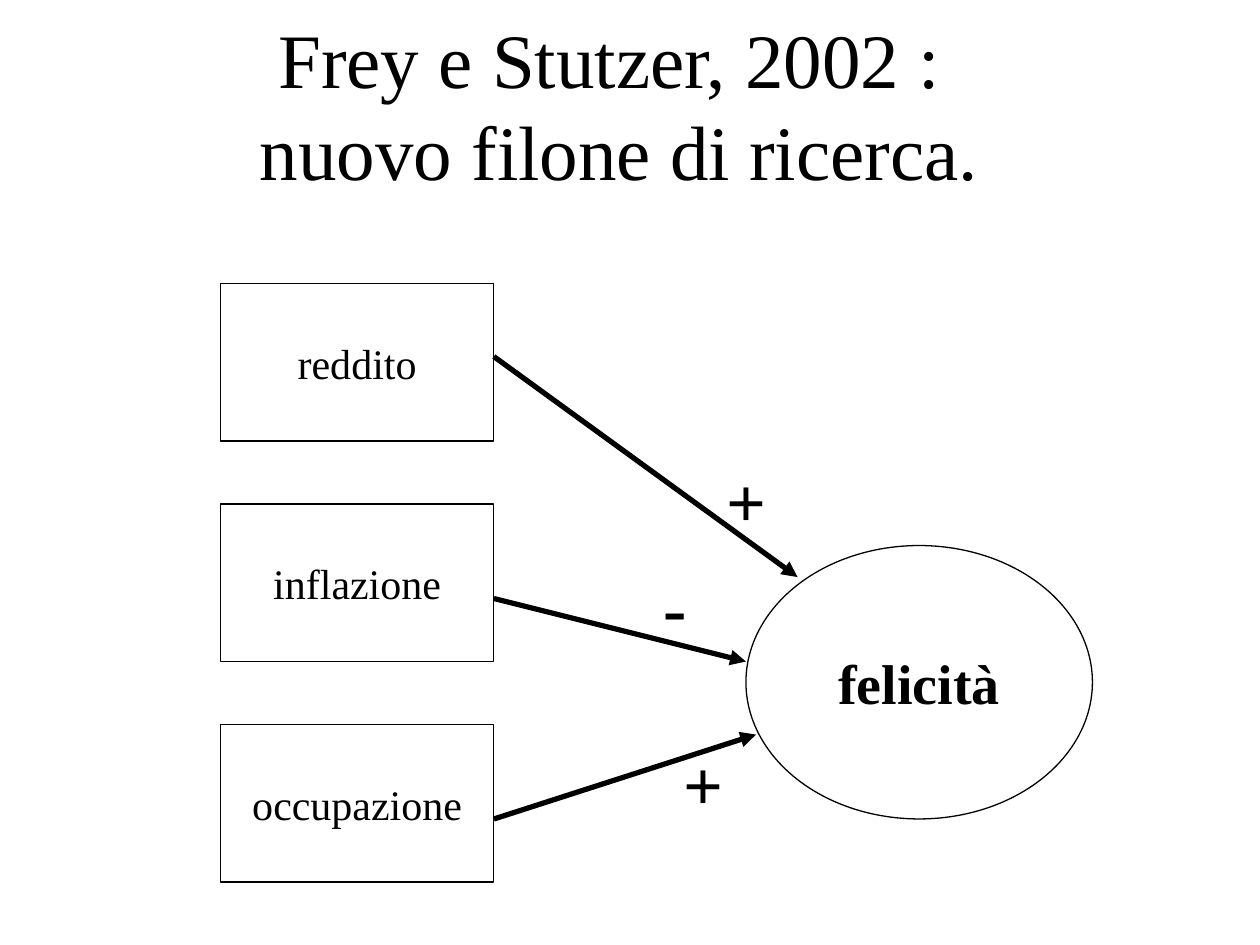
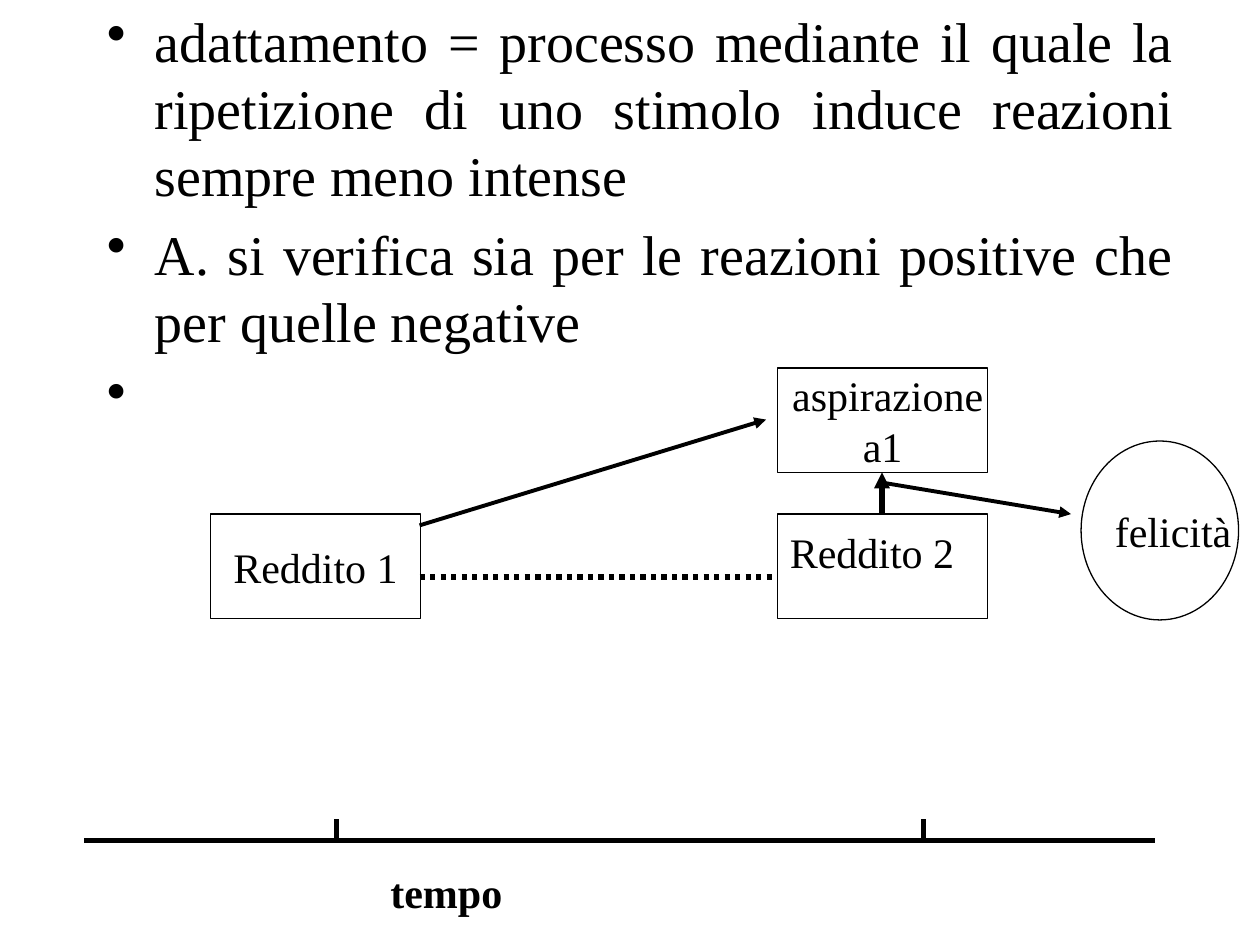
from lxml import etree
from pptx import Presentation
from pptx.dml.color import RGBColor
from pptx.enum.dml import MSO_LINE
from pptx.enum.shapes import MSO_CONNECTOR, MSO_SHAPE
from pptx.enum.text import MSO_ANCHOR, PP_ALIGN
from pptx.oxml.ns import qn
from pptx.util import Inches, Pt

RECT, OVAL = MSO_SHAPE.RECTANGLE, MSO_SHAPE.OVAL
STRAIGHT, DOTS = MSO_CONNECTOR.STRAIGHT, MSO_LINE.ROUND_DOT
TOP, MIDDLE = MSO_ANCHOR.TOP, MSO_ANCHOR.MIDDLE
LEFT, CENTER, JUSTIFY = PP_ALIGN.LEFT, PP_ALIGN.CENTER, PP_ALIGN.JUSTIFY

COLORS = {"ink": "000000", "paper": "FFFFFF"}
INK = RGBColor.from_string(COLORS["ink"])
PAPER = RGBColor.from_string(COLORS["paper"])
FONT = "Times New Roman"


def write(frame, lines, size, bold=False, align=LEFT, anchor=TOP, wrap=True, bullet=False):
    for key, value in {"word_wrap": wrap, "vertical_anchor": anchor}.items():
        setattr(frame, key, value)
    for i, words in enumerate(lines):
        para = frame.paragraphs[0] if i == 0 else frame.add_paragraph()
        para.text = words
        para.alignment = align
        if bullet:
            if i:
                para.space_before = Pt(size * 0.2)
            props = para._p.get_or_add_pPr()
            props.set("marL", str(Inches(0.38)))
            props.set("indent", str(-Inches(0.38)))
            etree.SubElement(props, qn("a:buChar")).set("char", "•")
        look = {"name": FONT, "size": Pt(size), "bold": bold}
        for run in para.runs:
            for key, value in look.items():
                setattr(run.font, key, value)
            run.font.color.rgb = INK


def link(slide, start, end, width, arrow=True, dash=None):
    line = slide.shapes.add_connector(STRAIGHT, *map(Inches, start + end))
    line.line.color.rgb = INK
    for key, value in {"width": Pt(width), "dash_style": dash}.items():
        setattr(line.line, key, value)
    if arrow:
        etree.SubElement(line.line._get_or_add_ln(), qn("a:tailEnd")).set("type", "triangle")
    etree.SubElement(line._element.spPr, qn("a:effectLst"))


deck = Presentation()
deck.slide_width, deck.slide_height = Inches(10), Inches(7.5)
model, adapt = [deck.slides.add_slide(deck.slide_layouts[6]) for _ in range(2)]

causes = ["reddito", "inflazione", "occupazione"]
nodes = [
    (model, RECT, (1.75, 2.25 + 1.75 * i, 2.17, 1.25), [name], 24, False)
    for i, name in enumerate(causes)
] + [
    (model, OVAL, (5.92, 4.33, 2.75, 2.17), ["felicità"], 32, True),
    (adapt, RECT, (1.67, 4.08, 1.67, 0.83), ["Reddito 1"], 24, False),
    (adapt, RECT, (6.17, 2.92, 1.67, 0.83), [" aspirazione", "a1"], 24, False),
    (adapt, RECT, (6.17, 4.08, 1.67, 0.83), [], 24, False),
    (adapt, OVAL, (8.58, 3.5, 1.25, 1.42), [], 24, False),
]
for slide, kind, spot, lines, size, bold in nodes:
    node = slide.shapes.add_shape(kind, *map(Inches, spot))
    node.shadow.inherit = False
    node.fill.solid()
    node.fill.fore_color.rgb = PAPER
    node.line.color.rgb = INK
    node.line.width = Pt(0.75)
    write(node.text_frame, lines, size, bold, CENTER, MIDDLE, False)

title = ["Frey e Stutzer, 2002 : \vnuovo filone di ricerca."]
points = [
    "adattamento = processo mediante il quale la ripetizione di uno stimolo induce reazioni sempre meno intense",
    "A. si verifica sia per le reazioni positive che per quelle negative",
    " ",
]
head = {"size": 44, "align": CENTER, "anchor": MIDDLE}
body = {"size": 32, "align": JUSTIFY, "bullet": True}
sign = {"size": 40, "bold": True}
label = {"size": 24}
texts = [
    (model, (0.58, 0, 8.67, 1.65), title, head),
    (model, (5.67, 3.58, 0.5, 0.77), ["+"], sign),
    (model, (5.17, 4.42, 0.75, 0.77), ["-"], sign),
    (model, (5.33, 5.83, 0.67, 0.77), ["+"], sign),
    (adapt, (0.75, 0, 8.67, 6.67), points, body),
    (adapt, (3, 6.83, 4.08, 0.5), ["tempo"], {"size": 24, "bold": True}),
    (adapt, (6.17, 4.13, 1.88, 0.5), ["Reddito 2"], label),
    (adapt, (8.75, 3.96, 1.25, 0.5), ["felicità"], label),
]
for slide, spot, lines, look in texts:
    box = slide.shapes.add_textbox(*map(Inches, spot))
    write(box.text_frame, lines, **look)

for start, end in [(2.83, (6.33, 4.58)), (4.75, (5.92, 5.25)), (6.5, (6, 5.83))]:
    link(model, (3.92, start), end, 3)

link(adapt, (0.67, 6.67), (9.17, 6.67), 3, False)
for tick in (2.67, 7.33):
    link(adapt, (tick, 6.67), (tick, 6.5), 3, False)
link(adapt, (3.33, 4.58), (6.17, 4.58), 3, False, DOTS)
link(adapt, (3.33, 4.17), (6.08, 3.33), 2.25)
link(adapt, (7, 4.08), (7, 3.75), 3)
link(adapt, (7, 3.83), (8.5, 4.08), 2.25)

deck.save("out.pptx")
